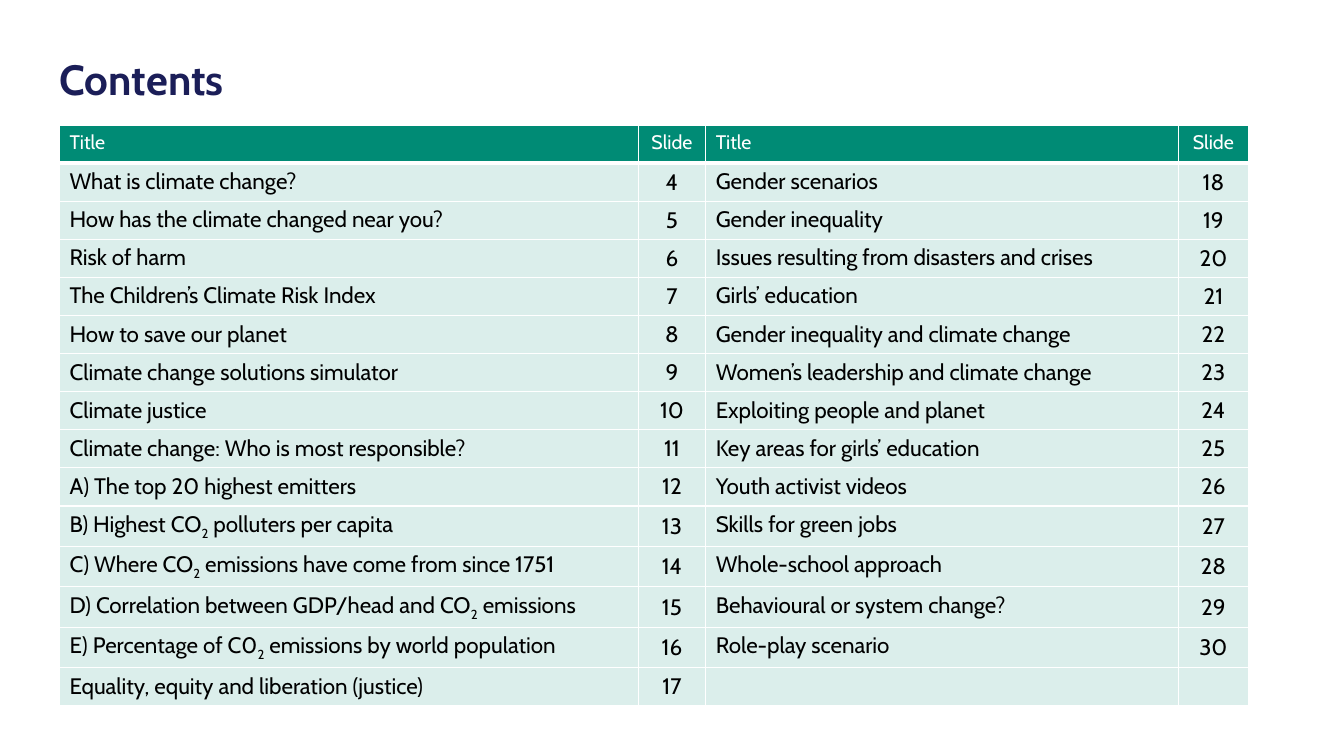
from itertools import zip_longest

from lxml.etree import SubElement
from pptx import Presentation
from pptx.dml.color import RGBColor
from pptx.enum.text import MSO_ANCHOR, PP_ALIGN
from pptx.oxml.ns import qn
from pptx.util import Inches, Pt

# Content: text between tildes is set as subscript
HEADING = "Contents"
HEADER = ["Title", "Slide"] * 2
FIRST_SLIDE = 4
LEFT_TITLES = [
    "What is climate change?",
    "How has the climate changed near you?",
    "Risk of harm",
    "The Children’s Climate Risk Index",
    "How to save our planet",
    "Climate change solutions simulator",
    "Climate justice",
    "Climate change: Who is most responsible?",
    "A) The top 20 highest emitters",
    "B) Highest CO~2~ polluters per capita",
    "C) Where CO~2~ emissions have come from since 1751",
    "D) Correlation between GDP/head and CO~2~ emissions",
    "E) Percentage of C0~2~ emissions by world population",
    "Equality, equity and liberation (justice)",
]
RIGHT_TITLES = [
    "Gender scenarios",
    "Gender inequality",
    "Issues resulting from disasters and crises",
    "Girls’ education",
    "Gender inequality and climate change",
    "Women’s leadership and climate change",
    "Exploiting people and planet",
    "Key areas for girls’ education",
    "Youth activist videos",
    "Skills for green jobs",
    "Whole-school approach",
    "Behavioural or system change?",
    "Role-play scenario",
]

# Theme and layout, in inches and points
THEME = {
    "font": "Cabin", "navy": "1B1E58", "green": "008B75", "white": "FFFFFF",
    "black": "000000", "tint": 14, "heading": 30.2, "header": 14, "body": 16,
}
SLIDE_W, SLIDE_H = 13.33, 7.5
MARGIN = 0.59
TABLE_TOP = 1.24
COLUMNS = [5.74, 0.67, 4.69, 0.69]
ROW_H = 0.378


def add_text(p, text, size, color, bold=False):
    for i, part in enumerate(text.split("~")):
        r = p.add_run()
        r.text = part
        fmt = {"name": THEME["font"], "size": Pt(size), "bold": bold}
        for key, value in fmt.items():
            setattr(r.font, key, value)
        r.font.color.rgb = RGBColor.from_string(THEME[color])
        if i % 2:
            r.font._element.set("baseline", "-25000")


def style_cell(cell, is_header):
    tcPr = cell._tc.get_or_add_tcPr()
    for side in "LRTB":
        thick = (is_header and side == "B")
        ln = SubElement(tcPr, qn(f"a:ln{side}"), w=str(Pt(3 if thick else 1)))
        fill = SubElement(ln, qn("a:solidFill"))
        SubElement(fill, qn("a:srgbClr"), val=THEME["white"])
    cell.fill.solid()
    cell.fill.fore_color.rgb = RGBColor.from_string(THEME["green"])
    if not is_header:
        clr = tcPr.find(qn("a:solidFill")).find(qn("a:srgbClr"))
        SubElement(clr, qn("a:alpha"), val=str(THEME["tint"] * 1000))


def fill_cell(cell, text, is_header, is_number):
    style_cell(cell, is_header)
    p = cell.text_frame.paragraphs[0]
    size = THEME["header" if is_header else "body"]
    if not text:
        SubElement(p._p, qn("a:endParaRPr"), sz=str(size * 100))
        return
    add_text(p, text, size, "white" if is_header else "black")
    if is_number:
        p.alignment = PP_ALIGN.CENTER
        if not is_header:
            cell.vertical_anchor = MSO_ANCHOR.MIDDLE


def numbered(titles, start):
    return [(title, str(n)) for n, title in enumerate(titles, start)]


def main():
    prs = Presentation()
    prs.slide_width, prs.slide_height = Inches(SLIDE_W), Inches(SLIDE_H)
    s = prs.slides.add_slide(prs.slide_layouts[6])

    # Contents table: two numbered lists side by side
    left = numbered(LEFT_TITLES, FIRST_SLIDE)
    right = numbered(RIGHT_TITLES, FIRST_SLIDE + len(left))
    pairs = zip_longest(left, right, fillvalue=("", ""))
    rows = [HEADER] + [[*a, *b] for a, b in pairs]
    frame = s.shapes.add_table(
        len(rows), len(COLUMNS), Inches(MARGIN), Inches(TABLE_TOP),
        Inches(sum(COLUMNS)), Inches(ROW_H * len(rows)))
    table = frame.table
    for column, width in zip(table.columns, COLUMNS):
        column.width = Inches(width)
    for i, row in enumerate(rows):
        table.rows[i].height = Inches(ROW_H)
        for j, text in enumerate(row):
            fill_cell(table.cell(i, j), text, i == 0, j % 2 == 1)

    # Heading
    tf = s.shapes.add_textbox(Inches(MARGIN), Inches(MARGIN),
                              Inches(11.5), Inches(0.69)).text_frame
    tf.word_wrap = True
    for side in ("left", "top", "right", "bottom"):
        setattr(tf, f"margin_{side}", 0)
    p = tf.paragraphs[0]
    p.line_spacing, p.space_after = 0.9, Pt(12)
    add_text(p, HEADING, THEME["heading"], "navy", bold=True)

    prs.save("out.pptx")


if __name__ == "__main__":
    main()
